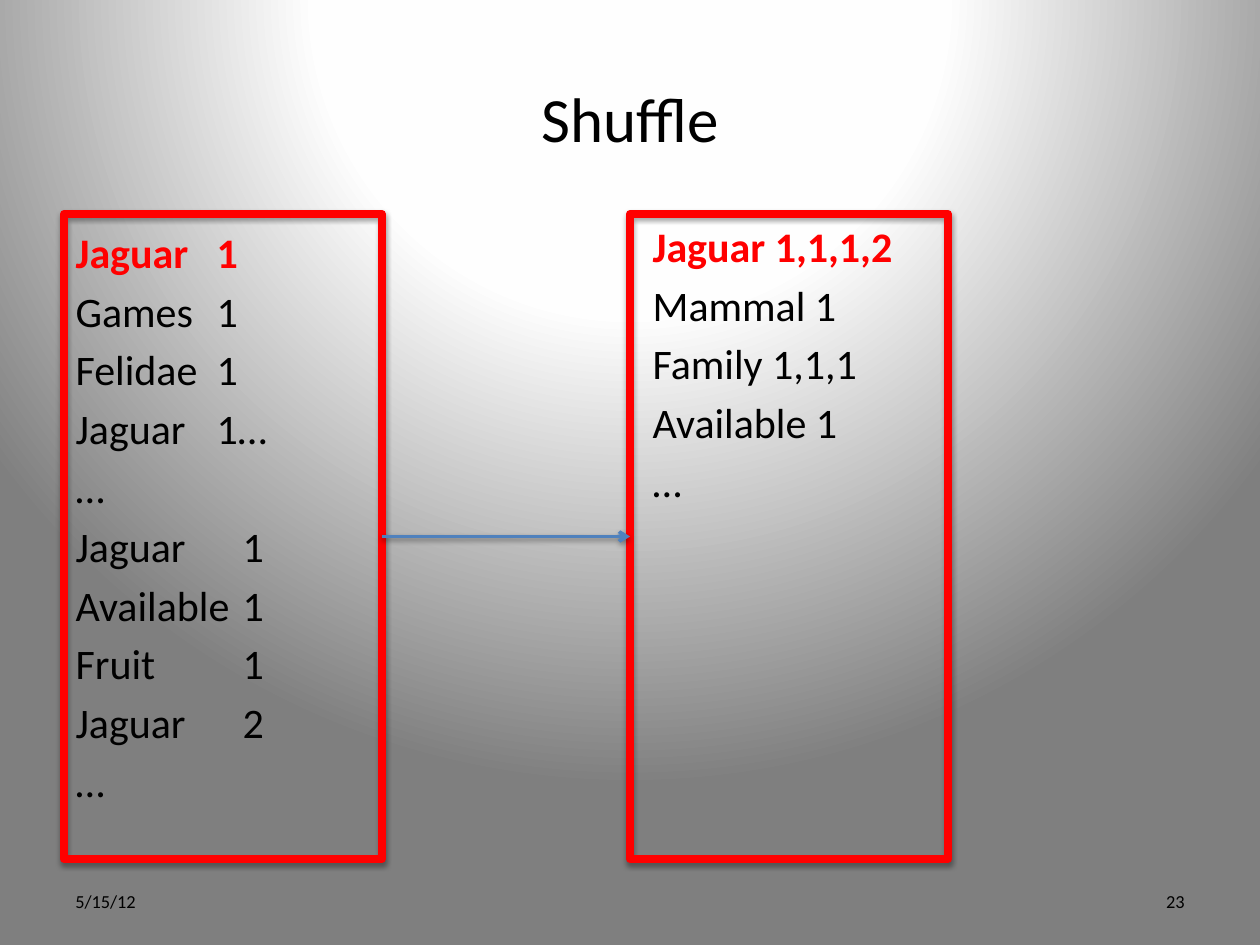
from dataclasses import dataclass

from lxml import etree
from pptx import Presentation
from pptx.dml.color import RGBColor
from pptx.enum.shapes import MSO_CONNECTOR, MSO_SHAPE
from pptx.enum.text import MSO_ANCHOR, MSO_AUTO_SIZE, PP_ALIGN
from pptx.oxml import parse_xml
from pptx.oxml.ns import nsdecls, qn
from pptx.util import Pt

RECTANGLE = MSO_SHAPE.RECTANGLE
STRAIGHT = MSO_CONNECTOR.STRAIGHT
LEFT, CENTER, RIGHT = PP_ALIGN.LEFT, PP_ALIGN.CENTER, PP_ALIGN.RIGHT
TOP, MIDDLE = MSO_ANCHOR.TOP, MSO_ANCHOR.MIDDLE
NO_AUTOFIT = MSO_AUTO_SIZE.NONE

EMU_PER_PX = 914400 / 126
LEFT_SIDE, RIGHT_SIDE = 1, 3


@dataclass(frozen=True)
class Theme:
    font: str = "Calibri"
    text: str = "000000"
    accent: str = "FF0000"
    arrow: str = "4F81BD"
    gradient: tuple = ((0, "FFFFFF"), (40, "FEFEFE"), (100, "7F7F7F"))
    title_size: float = 36
    body_size: float = 24
    footer_size: float = 10.5
    frame_width: float = 4.5
    arrow_width: float = 2


THEME = Theme()

# Each emitted key and count, with the hanging indent that aligns the counts
MAPPED = [
    ("Jaguar\t1", 141), ("Games\t1", 141), ("Felidae\t1", 141),
    ("Jaguar\t1…", 141), ("…", 0),
    ("Jaguar\t1", 167), ("Available\t1", 167), ("Fruit\t1", 167),
    ("Jaguar\t2", 167), ("…", 0),
]
SHUFFLED = [(line, 0) for line in (
    "Jaguar 1,1,1,2", "Mammal 1", "Family 1,1,1", "Available 1", "…")]


def px(length):
    return round(length * EMU_PER_PX)


def place(item, left, top, width, height):
    item.left, item.top = px(left), px(top)
    item.width, item.height = px(width), px(height)


def write(paragraph, text, *, size, color=THEME.text, bold=False, align=LEFT):
    paragraph.alignment = align
    run = paragraph.add_run()
    run.text = text
    run.font.name = THEME.font
    run.font.size = Pt(size)
    run.font.bold = bold
    run.font.color.rgb = RGBColor.from_string(color)


def prepare_frame(holder, anchor):
    frame = holder.text_frame
    frame.word_wrap = True
    frame.auto_size = NO_AUTOFIT
    frame.vertical_anchor = anchor
    return frame


def paint_background(slide):
    stops = "".join(
        f'<a:gs pos="{pos * 1000}"><a:srgbClr val="{color}"/></a:gs>'
        for pos, color in THEME.gradient)
    slide.element.cSld.insert(0, parse_xml(
        f'<p:bg {nsdecls("p", "a")}><p:bgPr><a:gradFill rotWithShape="1">'
        f'<a:gsLst>{stops}</a:gsLst><a:path path="circle">'
        '<a:fillToRect l="50000" t="-80000" r="50000" b="180000"/></a:path>'
        '</a:gradFill><a:effectLst/></p:bgPr></p:bg>'))


def add_shadow(item, distance, opacity):
    item.element.spPr.append(parse_xml(
        f'<a:effectLst {nsdecls("a")}><a:outerShdw blurRad="{Pt(3.1)}" '
        f'dist="{Pt(distance)}" dir="5400000" rotWithShape="0">'
        f'<a:srgbClr val="000000"><a:alpha val="{opacity * 1000}"/></a:srgbClr>'
        '</a:outerShdw></a:effectLst>'))


def fill_list(body, lines, box):
    """Fill an unbulleted list whose first line is highlighted."""
    place(body, *box)
    frame = prepare_frame(body, TOP)
    for index, (line, hanging) in enumerate(lines):
        paragraph = frame.add_paragraph() if index else frame.paragraphs[0]
        first = index == 0
        write(paragraph, line, size=THEME.body_size, bold=first,
              color=THEME.accent if first else THEME.text)
        properties = paragraph._p.get_or_add_pPr()
        properties.set("marL", str(px(hanging)))
        properties.set("indent", str(-px(hanging)))
        etree.SubElement(properties, qn("a:buNone"))


def add_footer(slide, text, left, align):
    footer = slide.shapes.add_textbox(0, 0, 0, 0)
    place(footer, left, 876, 294, 50)
    write(prepare_frame(footer, MIDDLE).paragraphs[0], text,
          size=THEME.footer_size, align=align)


def add_frame(slide, left):
    frame = slide.shapes.add_shape(RECTANGLE, 0, 0, 0, 0)
    place(frame, left, 214, 318, 645)
    frame.fill.background()
    frame.line.color.rgb = RGBColor.from_string(THEME.accent)
    frame.line.width = Pt(THEME.frame_width)
    add_shadow(frame, 1.8, 35)
    return frame


def add_arrow(slide, source, target):
    arrow = slide.shapes.add_connector(STRAIGHT, 0, 0, 0, 0)
    arrow.begin_connect(source, RIGHT_SIDE)
    arrow.end_connect(target, LEFT_SIDE)
    arrow.line.color.rgb = RGBColor.from_string(THEME.arrow)
    arrow.line.width = Pt(THEME.arrow_width)
    etree.SubElement(arrow.line._get_or_add_ln(), qn("a:tailEnd"), type="arrow")
    add_shadow(arrow, 1.6, 38)


def main():
    deck = Presentation()
    deck.slide_width, deck.slide_height = px(1260), px(945)
    slide = deck.slides.add_slide(deck.slide_layouts.get_by_name("Two Content"))
    paint_background(slide)

    # Title and the two lists
    title, mapped, shuffled = slide.placeholders
    place(title, 63, 38, 1134, 158)
    write(prepare_frame(title, MIDDLE).paragraphs[0], "Shuffle",
          size=THEME.title_size, align=CENTER)
    fill_list(mapped, MAPPED, (63, 220, 378, 624))
    fill_list(shuffled, SHUFFLED, (640, 214, 557, 624))

    # Date and slide number
    add_footer(slide, "5/15/12", 63, LEFT)
    add_footer(slide, "23", 903, RIGHT)

    # Frames around the lists, joined by an arrow
    mapped_frame = add_frame(slide, 64)
    shuffled_frame = add_frame(slide, 630)
    add_arrow(slide, mapped_frame, shuffled_frame)

    deck.save("out.pptx")


if __name__ == "__main__":
    main()
